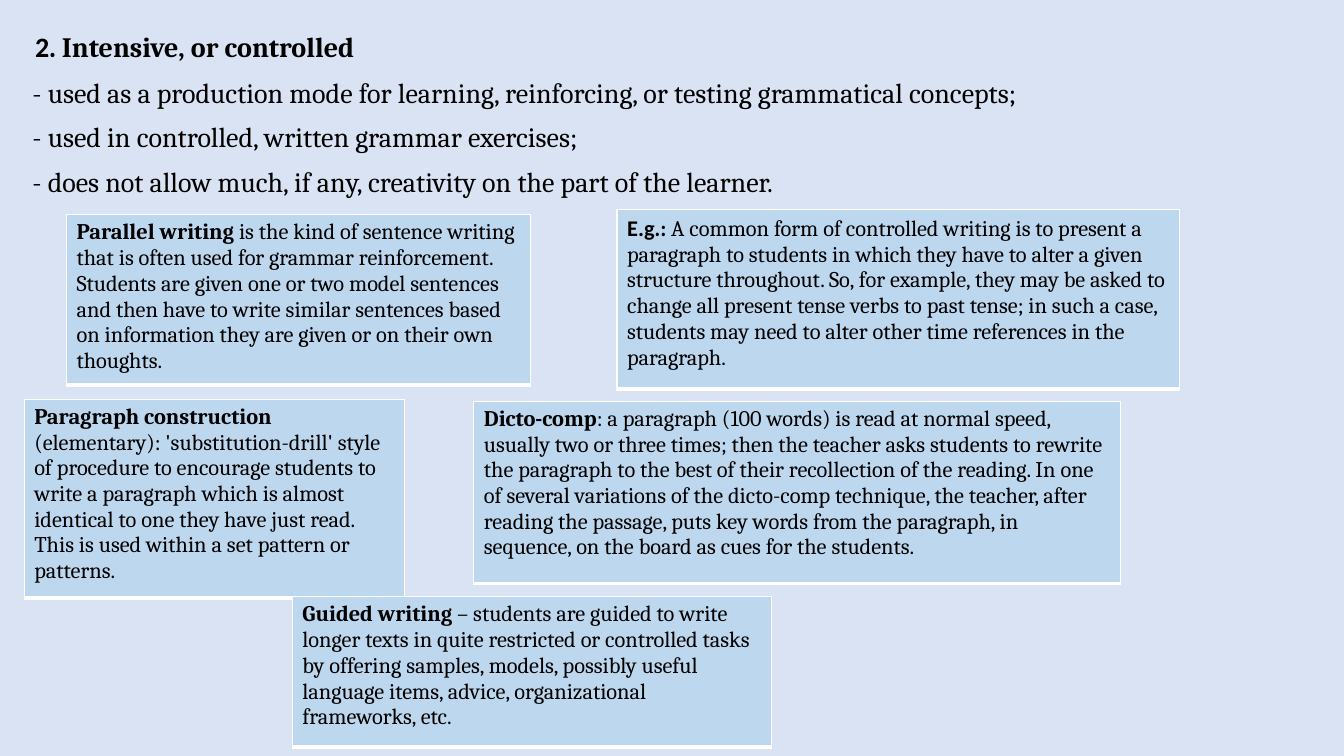
from lxml import etree
from pptx import Presentation
from pptx import util as u
from pptx.dml.color import RGBColor
from pptx.enum import text
from pptx.oxml import ns

BACKGROUND = RGBColor(0xDA, 0xE3, 0xF3)
CARD = RGBColor(0xBD, 0xD7, 0xEE)
INK = RGBColor(0x00, 0x00, 0x00)
BORDER = RGBColor(0xFF, 0xFF, 0xFF)

PLAIN = {"name": "Cambria", "bold": False}
STRONG = {"name": "Cambria", "bold": True}
STRONG_SANS = {"name": "Calibri", "bold": True}

OUTLINE = [
    [(" ", {**STRONG_SANS, "size": u.Pt(28)}), ("2", STRONG_SANS),
     (". Intensive, or controlled", STRONG)],
    [(" - used as a production mode for learning, reinforcing, or testing "
      "grammatical concepts;", PLAIN)],
    [(" - used in controlled, written grammar exercises;", PLAIN)],
    [(" - does not allow much, if any, creativity on the part of the learner.",
      PLAIN)],
]

CARDS = [
    ((6.12, 2.08, 5.58, 1.78), [
        ("E.g", STRONG_SANS), (".: ", STRONG),
        ("A common form of controlled writing is to present a paragraph to "
         "students in which they have to alter a given structure throughout. "
         "So, for example, they may be asked to change all present tense verbs "
         "to past tense; in such a case, students may need to alter other time "
         "references in the paragraph.", PLAIN)]),
    ((4.7, 3.98, 6.41, 1.81), [
        ("Dicto-comp", STRONG),
        (": a paragraph (100 words) is read at normal speed, usually two or "
         "three times; then the teacher asks students to rewrite the paragraph "
         "to the best of their recollection of the reading. In one of several "
         "variations of the dicto-comp technique, the teacher, after reading "
         "the passage, puts key words from the paragraph, in sequence, on the "
         "board as cues for the students.", PLAIN)]),
    ((0.66, 2.13, 4.6, 1.69), [
        ("Parallel writing", STRONG),
        (" is the kind of sentence writing that is often used for grammar "
         "reinforcement. Students are given one or two model sentences and then "
         "have to write similar sentences based on information they are given "
         "or on their own thoughts.", PLAIN)]),
    ((0.24, 3.96, 3.77, 1.97), [
        ("Paragraph construction ", STRONG),
        ("(elementary): 'substitution-drill' style of procedure to encourage "
         "students to write a paragraph which is almost identical to one they "
         "have just read. This is used within a set pattern or patterns.",
         PLAIN)]),
    ((2.9, 5.92, 4.75, 1.49), [
        ("Guided writing ", STRONG),
        ("– students are guided to write longer texts in quite restricted or "
         "controlled tasks by offering samples, models, possibly useful "
         "language items, advice, organizational frameworks, etc.", PLAIN)]),
]


def set_values(target, values):
    for name, value in values.items():
        setattr(target, name, value)


class SlideBuilder:
    outline_size = u.Pt(20)
    card_size = u.Pt(16)
    outline_spacing = {"line_spacing": 0.9, "space_before": u.Pt(10)}
    border_widths = {"lnL": 1, "lnR": 1, "lnT": 1, "lnB": 3}

    def __init__(self, deck):
        self.page = deck.slides.add_slide(deck.slide_layouts[1])
        fill = self.page.background.fill
        fill.solid()
        fill.fore_color.rgb = BACKGROUND
        title = self.page.shapes.title.element
        title.getparent().remove(title)

    def add_spans(self, para, spans, size):
        for words, style in spans:
            span = para.add_run()
            span.text = words
            set_values(span.font, {"size": size, **style})
            span.font.color.rgb = INK

    def body(self, bounds, paragraphs):
        box = self.page.placeholders[1]
        names = ("left", "top", "width", "height")
        set_values(box, dict(zip(names, map(u.Inches, bounds))))
        frame = box.text_frame
        set_values(frame, {"word_wrap": True,
                           "auto_size": text.MSO_AUTO_SIZE.NONE,
                           "vertical_anchor": text.MSO_ANCHOR.TOP})
        for index, spans in enumerate(paragraphs):
            para = frame.add_paragraph() if index else frame.paragraphs[0]
            set_values(para, self.outline_spacing)
            properties = para._p.get_or_add_pPr()
            properties.set("marL", "0")
            properties.set("indent", "0")
            etree.SubElement(properties, ns.qn("a:buNone"))
            self.add_spans(para, spans, self.outline_size)

    def card(self, bounds, spans):
        frame = self.page.shapes.add_table(1, 1, *map(u.Inches, bounds))
        set_values(frame.table, {"first_row": False, "horz_banding": False})
        cell = frame.table.cell(0, 0)
        cell.fill.solid()
        cell.fill.fore_color.rgb = CARD
        self.add_spans(cell.text_frame.paragraphs[0], spans, self.card_size)
        self.borders(cell)

    def borders(self, cell):
        properties = cell._tc.get_or_add_tcPr()
        for index, (side, width) in enumerate(self.border_widths.items()):
            line = etree.Element(ns.qn(f"a:{side}"), w=str(u.Pt(width)))
            fill = etree.SubElement(line, ns.qn("a:solidFill"))
            etree.SubElement(fill, ns.qn("a:srgbClr"), val=str(BORDER))
            properties.insert(index, line)


def main():
    deck = Presentation()
    set_values(deck, {"slide_width": u.Inches(13.33),
                      "slide_height": u.Inches(7.5)})
    builder = SlideBuilder(deck)
    builder.body((0.16, 0.18, 11.71, 7.32), OUTLINE)
    for bounds, spans in CARDS:
        builder.card(bounds, spans)
    deck.save("out.pptx")


if __name__ == "__main__":
    main()
